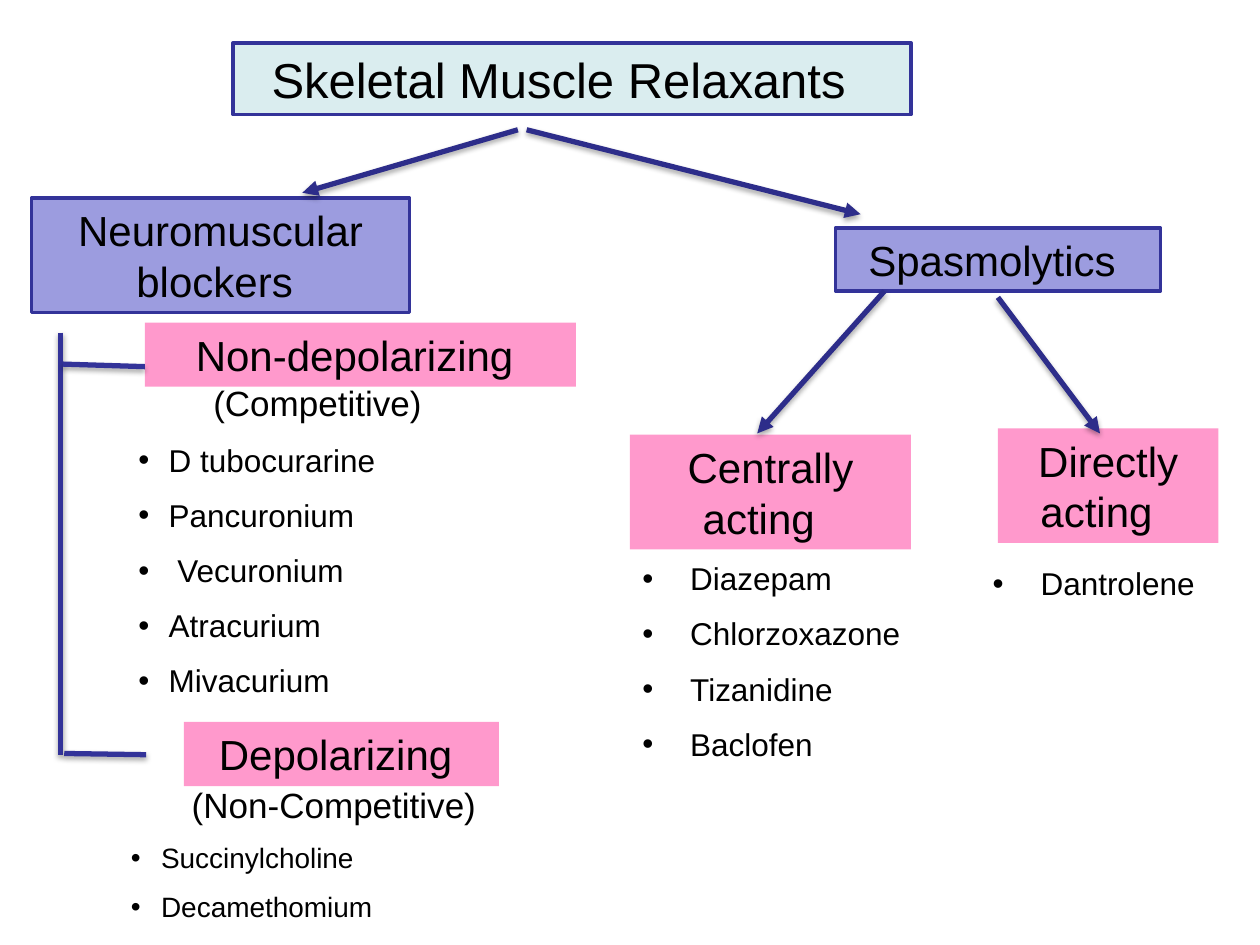
from lxml import etree
from pptx import Presentation
from pptx.dml.color import RGBColor
from pptx.enum import shapes, text
from pptx.oxml import parse_xml
from pptx.oxml.ns import nsdecls, qn
from pptx.util import Inches, Pt

FONT = "Arial"
COLORS = {
    "text": "000000",
    "title": "DAEDEF",
    "group": "9C9CDF",
    "subgroup": "FF99CC",
    "line": "333399",
    "arrow": "2D2D8A",
}
SHADOW = (
    f'<a:effectLst {nsdecls("a")}>'
    '<a:outerShdw blurRad="39370" dist="22860" dir="5400000" rotWithShape="0">'
    '<a:srgbClr val="000000"><a:alpha val="35000"/></a:srgbClr>'
    "</a:outerShdw></a:effectLst>"
)


def rgb(name):
    return RGBColor.from_string(COLORS[name])


def format_paragraph(p, size, align):
    p.alignment = align
    for r in p.runs:
        r.font.name = FONT
        r.font.size = Pt(size)
        r.font.color.rgb = rgb("text")


def add_box(s, label, box, fill, size=24, outlined=False):
    sp = s.shapes.add_shape(shapes.MSO_SHAPE.RECTANGLE, *map(Inches, box))
    sp.shadow.inherit = False
    sp.fill.solid()
    sp.fill.fore_color.rgb = rgb(fill)
    if outlined:
        sp.line.color.rgb = rgb("line")
        sp.line.width = Pt(2)
    else:
        sp.line.fill.background()
    tf = sp.text_frame
    tf.word_wrap = True
    tf.vertical_anchor = text.MSO_ANCHOR.MIDDLE
    tf.text = label
    format_paragraph(tf.paragraphs[0], size, text.PP_ALIGN.CENTER)


def add_bullet(p, indent):
    pPr = p._p.get_or_add_pPr()
    pPr.set("marL", str(Inches(indent)))
    pPr.set("indent", str(-Inches(indent)))
    etree.SubElement(pPr, qn("a:buFont"), typeface=FONT)
    etree.SubElement(pPr, qn("a:buChar"), char="•")


def add_drug_list(s, drugs, box, size=18, indent=0.38, heading=None):
    tf = s.shapes.add_textbox(*map(Inches, box)).text_frame
    tf.word_wrap = True
    tf.text = "\n".join(([heading] if heading else []) + drugs)
    for i, p in enumerate(tf.paragraphs):
        if heading and i == 0:
            format_paragraph(p, 20, text.PP_ALIGN.CENTER)
            continue
        format_paragraph(p, size, text.PP_ALIGN.LEFT)
        if i:
            p.space_before = Pt(round(size * 0.55, 1))
        add_bullet(p, indent)


def add_line(s, start, end, color="line", arrow=False):
    c = s.shapes.add_connector(
        shapes.MSO_CONNECTOR.STRAIGHT, *map(Inches, (*start, *end))
    )
    c.line.color.rgb = rgb(color)
    c.line.width = Pt(3)
    if arrow:
        etree.SubElement(c.line._get_or_add_ln(), qn("a:tailEnd"), type="triangle")
    c._element.spPr.append(parse_xml(SHADOW))


def main():
    prs = Presentation()
    prs.slide_width, prs.slide_height = Inches(10), Inches(7.5)
    s = prs.slides.add_slide(prs.slide_layouts[6])

    add_box(s, "Skeletal Muscle Relaxants  ", (1.85, 0.34, 5.38, 0.57),
            "title", size=28, outlined=True)
    for label, box in (
        ("Neuromuscular blockers ", (0.25, 1.57, 3, 0.91)),
        ("Spasmolytics ", (6.63, 1.81, 2.58, 0.5)),
    ):
        add_box(s, label, box, "group", outlined=True)
    for label, box in (
        ("Centrally acting  ", (5, 3.45, 2.23, 0.91)),
        ("Directly acting  ", (7.92, 3.4, 1.75, 0.91)),
        ("Non-depolarizing ", (1.15, 2.56, 3.42, 0.51)),
        ("Depolarizing ", (1.46, 5.73, 2.5, 0.51)),
    ):
        add_box(s, label, box, "subgroup")

    for start, end in (
        ((4.11, 1.03), (2.4, 1.53)),
        ((4.18, 1.03), (6.83, 1.7)),
        ((7.02, 2.31), (6.01, 3.44)),
        ((7.92, 2.36), (8.73, 3.44)),
    ):
        add_line(s, start, end, "arrow", arrow=True)
    for start, end in (
        ((0.48, 2.64), (0.48, 5.99)),
        ((0.5, 2.89), (1.15, 2.91)),
        ((0.51, 5.98), (1.16, 5.99)),
    ):
        add_line(s, start, end)

    add_drug_list(
        s,
        ["D tubocurarine", "Pancuronium", " Vecuronium", "Atracurium", "Mivacurium"],
        (1, 2.98, 3.04, 3.31), indent=0.24, heading="(Competitive)",
    )
    add_drug_list(
        s, ["Succinylcholine", "Decamethomium"],
        (0.94, 6.17, 3.42, 1.24), size=16, indent=0.24, heading="(Non-Competitive)",
    )
    add_drug_list(
        s, ["Diazepam", "Chlorzoxazone", "Tizanidine", "Baclofen"],
        (5, 4.39, 2.33, 1.77),
    )
    add_drug_list(s, ["Dantrolene"], (7.78, 4.43, 1.89, 0.4))

    prs.save("out.pptx")


if __name__ == "__main__":
    main()
